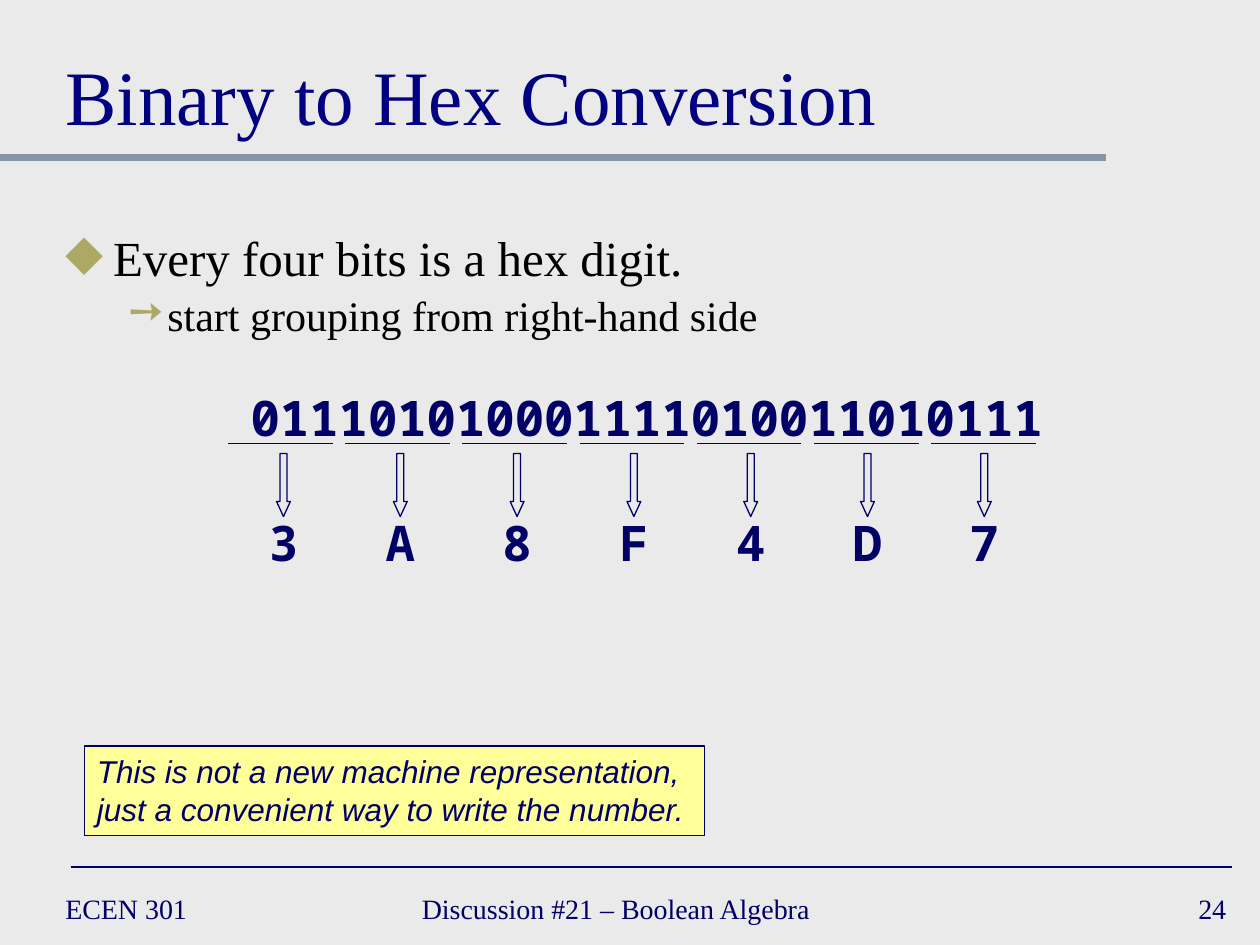
from lxml import etree
from pptx import Presentation, util as u
from pptx.dml.color import RGBColor
from pptx.enum import shapes, text
from pptx.oxml.ns import qn

NAVY = "000066"
SERIF = "Times New Roman"
MONO = "Noto Sans Mono"


def color(value):
    return RGBColor.from_string(value)


def write(paragraph, content, font_color=NAVY, align=text.PP_ALIGN.LEFT, **font_format):
    paragraph.text = content
    paragraph.alignment = align
    for run in paragraph.runs:
        run.font.color.rgb = color(font_color)
        for name, value in font_format.items():
            setattr(run.font, name, value)


presentation = Presentation()
presentation.slide_width = u.Inches(10)
presentation.slide_height = u.Inches(7.5)
slide = presentation.slides.add_slide(presentation.slide_layouts[5])
slide.background.fill.solid()
slide.background.fill.fore_color.rgb = color("EAEAEA")

title = slide.shapes.title
title_place = {"left": 0.42, "top": 0.17, "width": 9.17, "height": 1}
for name, value in title_place.items():
    setattr(title, name, u.Inches(value))
title.text_frame.auto_size = text.MSO_AUTO_SIZE.NONE
title.text_frame.vertical_anchor = text.MSO_ANCHOR.BOTTOM
write(title.text_frame.paragraphs[0], "Binary to Hex Conversion", "000080",
      name=SERIF, size=u.Pt(44))

group_lines = [(1.81 + 0.93 * i, 3.52, 2.64 + 0.93 * i, NAVY, 0.75) for i in range(7)]
rules = [(0, 1.25, 8.78, "8495A9", 4), (0.56, 6.88, 9.78, NAVY, 1)]
for start, y, end, line_color, width in rules + group_lines:
    line = slide.shapes.add_connector(shapes.MSO_CONNECTOR.STRAIGHT, u.Inches(start),
                                      u.Inches(y), u.Inches(end), u.Inches(y))
    line.line.color.rgb = color(line_color)
    line.line.width = u.Pt(width)
    etree.SubElement(line._element.spPr, qn("a:effectLst"))

left, center, right = text.PP_ALIGN.LEFT, text.PP_ALIGN.CENTER, text.PP_ALIGN.RIGHT
footer_font = {"name": SERIF, "size": u.Pt(16)}
mono_font = {"name": MONO, "size": u.Pt(28), "bold": True}
labels = [
    ("ECEN 301", 0.42, 7, 2.17, 0.42, left, footer_font),
    ("Discussion #21 – Boolean Algebra", 3.25, 7, 3.83, 0.42, left, footer_font),
    ("24", 7.75, 7, 2.08, 0.42, right, footer_font),
    ("011101010001111010011010111", 1.72, 3.03, 6.83, 0.57, center, mono_font),
]
for i, digit in enumerate("3A8F4D7"):
    x = 2.25 + 0.927 * i
    labels.append((digit, x - 0.54, 4.02, 1.08, 0.57, center, mono_font))
    arrow = slide.shapes.add_shape(shapes.MSO_SHAPE.DOWN_ARROW, u.Inches(x - 0.055),
                                   u.Inches(3.6), u.Inches(0.11), u.Inches(0.5))
    arrow.adjustments[0] = 0.5
    arrow.adjustments[1] = 1.09
    arrow.shadow.inherit = False
    arrow.fill.background()
    arrow.line.color.rgb = color(NAVY)
    arrow.line.width = u.Pt(0.75)

for content, x, y, width, height, align, font_format in labels:
    label = slide.shapes.add_textbox(*map(u.Inches, (x, y, width, height)))
    label.text_frame.word_wrap = True
    if font_format is footer_font:
        label.text_frame.vertical_anchor = text.MSO_ANCHOR.MIDDLE
    write(label.text_frame.paragraphs[0], content, align=align, **font_format)

body = slide.shapes.add_textbox(u.Inches(0.42), u.Inches(1.81), u.Inches(9.14), u.Inches(0.32))
body.text_frame.word_wrap = True
bullets = [
    ("Every four bits is a hex digit.", "◆", 28, 0, 0.38, -0.38, 0),
    ("start grouping from right-hand side", "➙", 24, 1, 0.81, -0.31, 4.8),
]
for i, (content, symbol, size, level, margin, indent, before) in enumerate(bullets):
    paragraph = body.text_frame.add_paragraph() if i else body.text_frame.paragraphs[0]
    properties = paragraph._p.get_or_add_pPr()
    properties.set("marL", str(u.Inches(margin)))
    properties.set("indent", str(u.Inches(indent)))
    bullet_color = etree.SubElement(properties, qn("a:buClr"))
    etree.SubElement(bullet_color, qn("a:srgbClr"), val="ACA964")
    etree.SubElement(properties, qn("a:buChar"), char=symbol)
    paragraph.level = level
    paragraph.line_spacing = 0.9
    paragraph.space_before = u.Pt(before)
    write(paragraph, content, "000000", name=SERIF, size=u.Pt(size))

note = slide.shapes.add_shape(shapes.MSO_SHAPE.RECTANGLE, u.Inches(0.67), u.Inches(5.92),
                              u.Inches(4.92), u.Inches(0.71))
note.shadow.inherit = False
note.fill.solid()
note.fill.fore_color.rgb = color("FFFF99")
note.line.color.rgb = color(NAVY)
note.line.width = u.Pt(0.75)
note.text_frame.word_wrap = True
note.text_frame.vertical_anchor = text.MSO_ANCHOR.TOP
write(note.text_frame.paragraphs[0],
      "This is not a new machine representation,\njust a convenient way to write the number.",
      name="Arial", size=u.Pt(18), italic=True)

presentation.save("out.pptx")
